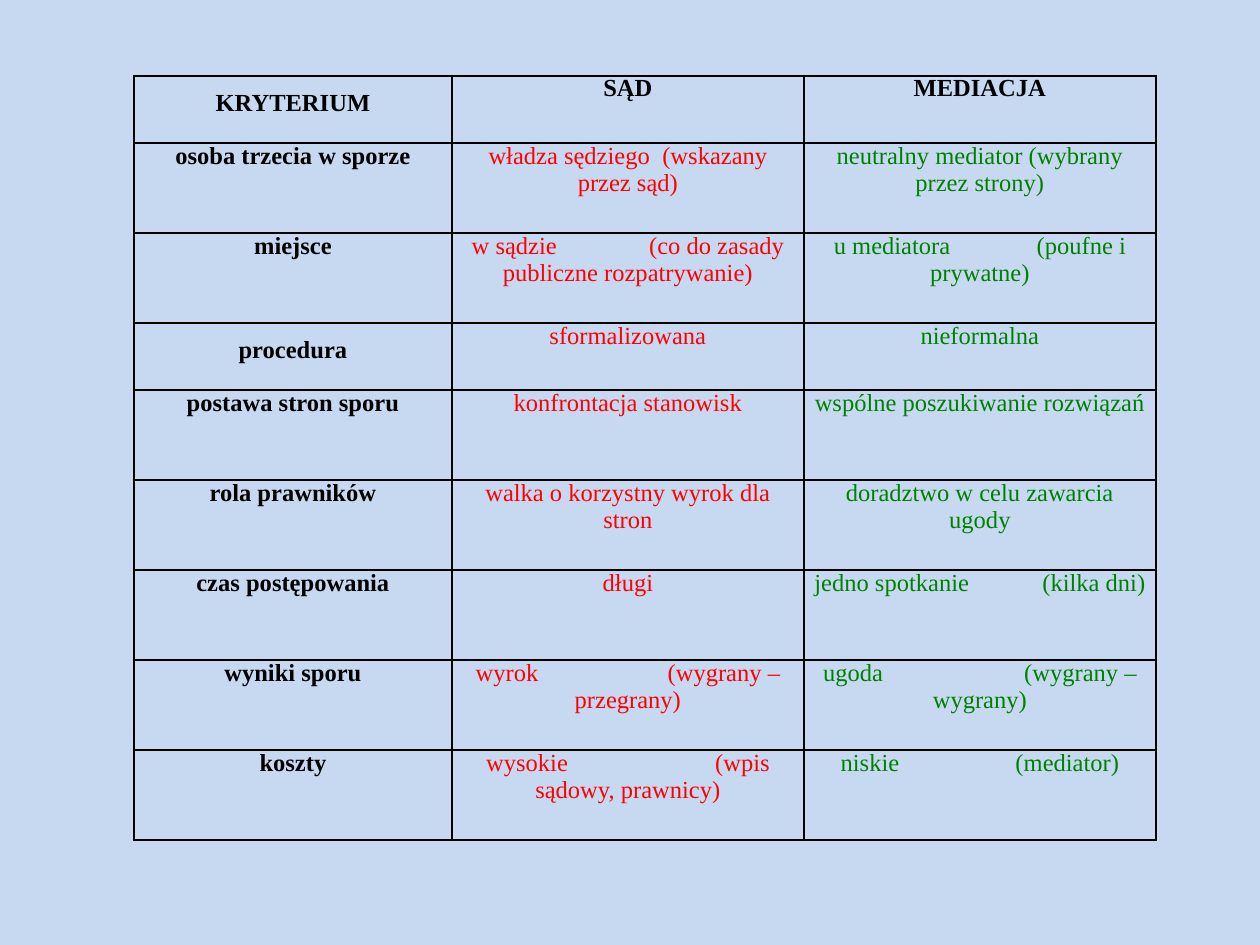
from lxml import etree
from pptx import Presentation
from pptx import util as u
from pptx.dml.color import RGBColor
from pptx.enum import text
from pptx.oxml import ns

EMU_PER_PX = 914400 // 126
COLORS = {"background": "C6D9F1", "ink": "000000", "court": "FF0000", "mediation": "008000"}
SPACE_WIDTH = 6  # px, one space at 14 pt

# A tuple holds the words before a gap, the gap's width in px, and the words after it.
HEADER = ("KRYTERIUM", "SĄD", "MEDIACJA")
CRITERIA = [
    ("osoba trzecia w sporze", ("władza sędziego", 12, "(wskazany przez sąd)"),
     "neutralny mediator (wybrany przez strony)"),
    ("miejsce", ("w sądzie", 92, "(co do zasady publiczne rozpatrywanie)"),
     ("u mediatora", 86, "(poufne i prywatne)")),
    ("procedura", "sformalizowana", "nieformalna"),
    ("postawa stron sporu", "konfrontacja stanowisk", "wspólne poszukiwanie rozwiązań"),
    ("rola prawników", "walka o korzystny wyrok dla stron", "doradztwo w celu zawarcia ugody"),
    ("czas postępowania", "długi", ("jedno spotkanie", 73, "(kilka dni)")),
    ("wyniki sporu", ("wyrok", 129, "(wygrany – przegrany)"),
     ("ugoda", 141, "(wygrany – wygrany)")),
    ("koszty", ("wysokie", 147, "(wpis sądowy, prawnicy)"), ("niskie", 116, "(mediator)")),
]
COLUMN_WIDTHS = (318, 352, 352)
LOW_ROW, HIGH_ROW = 67, 90
SPACED_OUT = ("KRYTERIUM", "procedura")


def px(length):
    return u.Emu(length * EMU_PER_PX)


class SlideBuilder:
    font_name = "Times New Roman"
    font_size = u.Pt(14)

    def __init__(self, slide):
        self.slide = slide

    def background(self, color):
        fill = self.slide.background.fill
        fill.solid()
        fill.fore_color.rgb = RGBColor.from_string(COLORS[color])

    def table(self, left, top, widths, heights):
        frame = self.slide.shapes.add_table(len(heights), len(widths), px(left), px(top),
                                            px(sum(widths)), px(sum(heights)))
        table = frame.table
        table.first_row = table.horz_banding = False
        for column, width in zip(table.columns, widths):
            column.width = px(width)
        for row, height in zip(table.rows, heights):
            row.height = px(height)
        return table

    def cell(self, cell, content, color, bold, line_spacing=None):
        cell.margin_left = cell.margin_right = px(9)
        cell.margin_top = cell.margin_bottom = 0
        cell.vertical_anchor = text.MSO_ANCHOR.TOP
        paragraph = cell.text_frame.paragraphs[0]
        paragraph.alignment = text.PP_ALIGN.CENTER
        if line_spacing:
            paragraph.line_spacing = line_spacing
        font = paragraph.font
        font.name, font.size, font.bold = self.font_name, self.font_size, bold
        font.color.rgb = RGBColor.from_string(COLORS[color])
        if isinstance(content, str):
            paragraph.add_run().text = content
        else:
            before, gap, after = content
            paragraph.add_run().text = before
            self.gap(paragraph, gap)
            paragraph.add_run().text = after

    def gap(self, paragraph, width):
        """Add one space, widened by character spacing."""
        run = paragraph.add_run()
        run.text = " "
        spacing = round(px(width - SPACE_WIDTH).pt * 100)
        run.font._element.set("spc", str(spacing))

    def borders(self, cell, top, bottom, sides=1.5):
        properties = cell._tc.get_or_add_tcPr()
        for tag, points in (("lnL", sides), ("lnR", sides), ("lnT", top), ("lnB", bottom)):
            line = etree.SubElement(properties, ns.qn(f"a:{tag}"), w=str(u.Pt(points)))
            fill = etree.SubElement(line, ns.qn("a:solidFill"))
            etree.SubElement(fill, ns.qn("a:srgbClr"), val=COLORS["ink"])
        cell.fill.background()


def main():
    deck = Presentation()
    deck.slide_width, deck.slide_height = u.Inches(10), u.Inches(7.5)
    builder = SlideBuilder(deck.slides.add_slide(deck.slide_layouts[6]))
    builder.background("background")

    rows = [HEADER, *CRITERIA]
    heights = [LOW_ROW if row[0] in SPACED_OUT else HIGH_ROW for row in rows]
    comparison = builder.table(134, 76, COLUMN_WIDTHS, heights)
    last = len(rows) - 1
    for r, row in enumerate(rows):
        for c, content in enumerate(row):
            cell = comparison.cell(r, c)
            is_header = r == 0
            color = "ink" if is_header else ("ink", "court", "mediation")[c]
            spacing = 1.5 if content in SPACED_OUT else u.Pt(15) if is_header else None
            builder.cell(cell, content, color, is_header or c == 0, spacing)
            builder.borders(cell, top=1.5 if r <= 1 else 1, bottom=1.5 if r in (0, last) else 1)

    deck.save("out.pptx")


if __name__ == "__main__":
    main()
